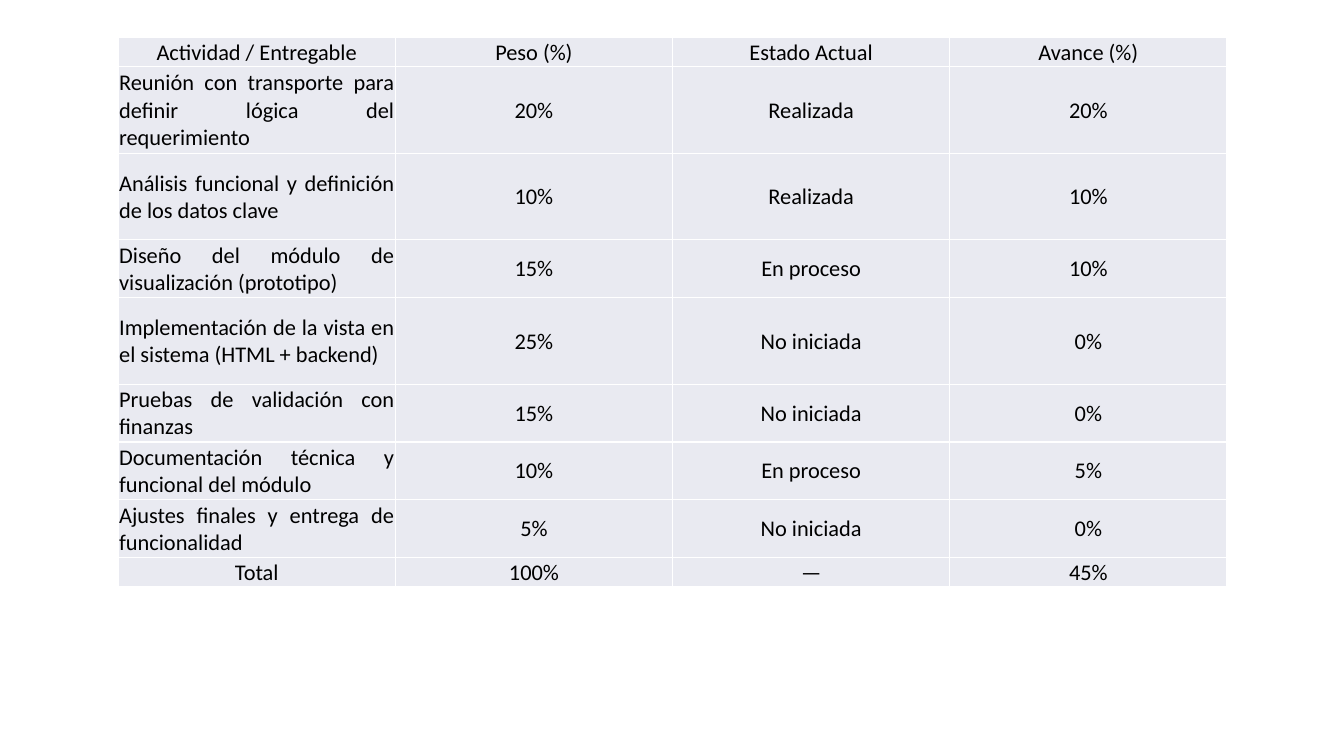
from dataclasses import dataclass

from lxml import etree
from pptx import Presentation
from pptx.dml.color import RGBColor
from pptx.enum.text import MSO_ANCHOR, PP_ALIGN
from pptx.oxml.ns import qn
from pptx.util import Pt

CENTER, JUSTIFY = PP_ALIGN.CENTER, PP_ALIGN.JUSTIFY
MIDDLE = MSO_ANCHOR.MIDDLE


@dataclass(frozen=True)
class Theme:
    font: str = "Calibri"
    size: int = 16
    text: str = "000000"
    cell: str = "E9EAF1"
    border: str = "FFFFFF"
    border_width: int = 1


THEME = Theme()
SLIDE_W, SLIDE_H = 2560, 1440
TABLE_LEFT, TABLE_TOP = 225, 72
COLUMN_W, LINE_H = 528, 55
INSET = 2


def px(length):
    """Convert px (192 to the inch) to EMU."""
    return int(length * 4762.5)


def add_borders(cell):
    properties = cell._tc.get_or_add_tcPr()
    for index, side in enumerate(("lnL", "lnR", "lnT", "lnB")):
        line = etree.Element(qn(f"a:{side}"), w=str(Pt(THEME.border_width)))
        fill = etree.SubElement(line, qn("a:solidFill"))
        etree.SubElement(fill, qn("a:srgbClr"), val=THEME.border)
        properties.insert(index, line)


# Height in text lines, then the four cells of the row
ACTIVITIES = [
    (1, "Actividad / Entregable", "Peso (%)", "Estado Actual", "Avance (%)"),
    (3, "Reunión con transporte para definir lógica del requerimiento", "20%", "Realizada", "20%"),
    (3, "Análisis funcional y definición de los datos clave", "10%", "Realizada", "10%"),
    (2, "Diseño del módulo de visualización (prototipo)", "15%", "En proceso", "10%"),
    (3, "Implementación de la vista en el sistema (HTML + backend)", "25%", "No iniciada", "0%"),
    (2, "Pruebas de validación con finanzas", "15%", "No iniciada", "0%"),
    (2, "Documentación técnica y funcional del módulo", "10%", "En proceso", "5%"),
    (2, "Ajustes finales y entrega de funcionalidad", "5%", "No iniciada", "0%"),
    (1, "Total", "100%", "—", "45%"),
]

prs = Presentation()
prs.slide_width, prs.slide_height = px(SLIDE_W), px(SLIDE_H)
slide = prs.slides.add_slide(prs.slide_layouts[6])

column_count = len(ACTIVITIES[0]) - 1
total_lines = sum(activity[0] for activity in ACTIVITIES)
progress = slide.shapes.add_table(
    len(ACTIVITIES), column_count, px(TABLE_LEFT), px(TABLE_TOP),
    px(COLUMN_W * column_count), px(LINE_H * total_lines)).table
progress.first_row = False
progress.horz_banding = False
for column in progress.columns:
    column.width = px(COLUMN_W)

for row_index, (lines, *values) in enumerate(ACTIVITIES):
    progress.rows[row_index].height = px(LINE_H * lines)
    for column_index, value in enumerate(values):
        cell = progress.cell(row_index, column_index)
        cell.margin_left = cell.margin_top = cell.margin_right = px(INSET)
        cell.margin_bottom = 0
        cell.vertical_anchor = MIDDLE
        cell.fill.solid()
        cell.fill.fore_color.rgb = RGBColor.from_string(THEME.cell)
        add_borders(cell)

        paragraph = cell.text_frame.paragraphs[0]
        paragraph.text = value
        is_activity = column_index == 0 and lines > 1
        paragraph.alignment = JUSTIFY if is_activity else CENTER
        font = paragraph.runs[0].font
        font.name = THEME.font
        font.size = Pt(THEME.size)
        font.color.rgb = RGBColor.from_string(THEME.text)

prs.save("out.pptx")
